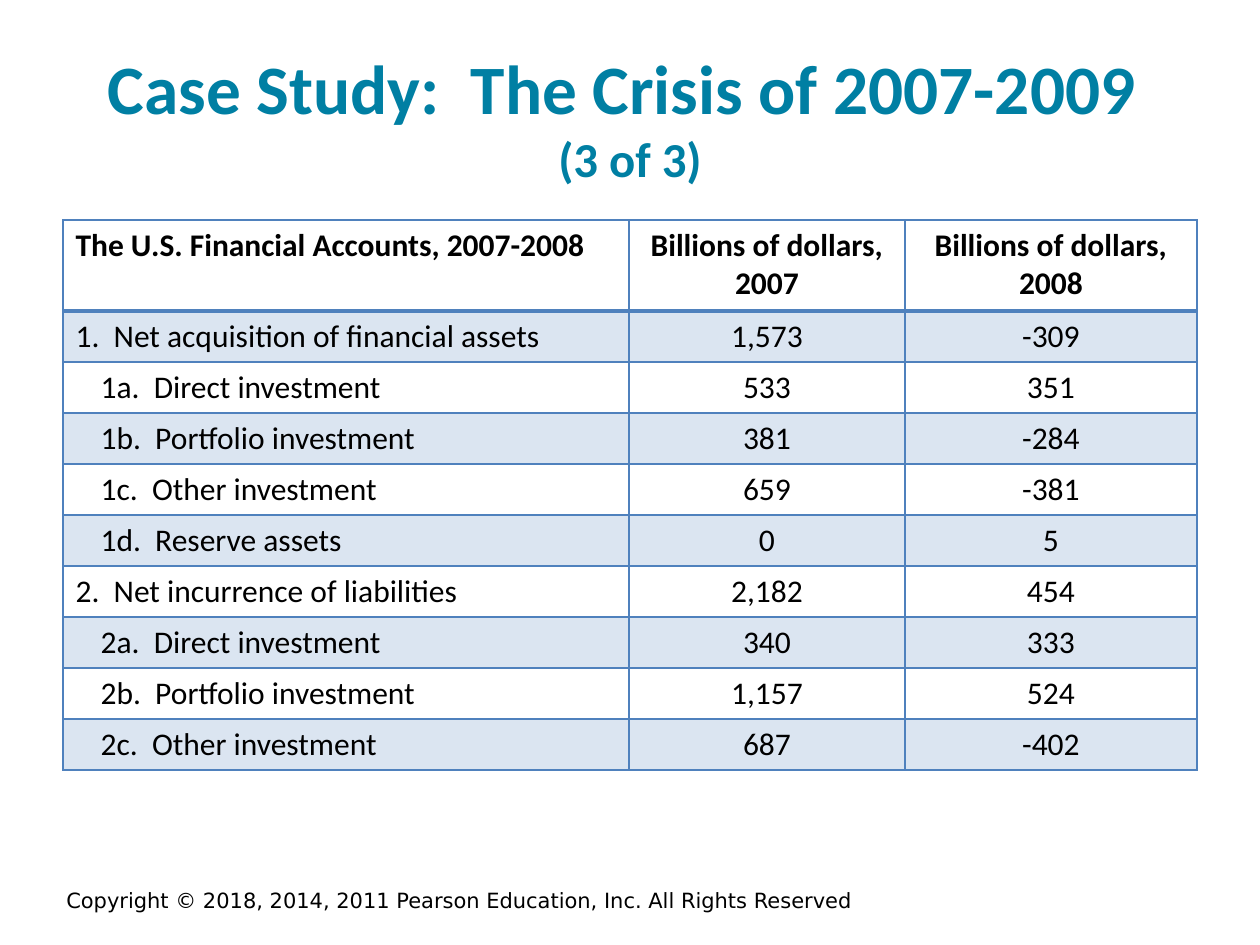
from lxml.etree import SubElement
from pptx import Presentation
from pptx.dml.color import RGBColor as Rgb
from pptx.enum.text import MSO_ANCHOR as Anchor, PP_ALIGN as Align
from pptx.oxml import parse_xml
from pptx.oxml.ns import nsdecls, qn
from pptx.util import Emu, Pt

SCALE = 914400 // 126
COLORS = {"title": "007FA3", "text": "000000", "accent": "4F81BD"}
COLUMN_WIDTHS = [566, 276, 292]
HEADER_HEIGHT, ROW_HEIGHT = 91, 51
INDENT = 25
HEADER = ["The U.S. Financial Accounts, 2007-2008",
          "Billions of dollars, 2007", "Billions of dollars, 2008"]
ACCOUNTS = [
    ("1.  Net acquisition of financial assets", "1,573", "-309"),
    ("1a.  Direct investment", "533", "351"),
    ("1b.  Portfolio investment", "381", "-284"),
    ("1c.  Other investment", "659", "-381"),
    ("1d.  Reserve assets", "0", "5"),
    ("2.  Net incurrence of liabilities", "2,182", "454"),
    ("2a.  Direct investment", "340", "333"),
    ("2b.  Portfolio investment", "1,157", "524"),
    ("2c.  Other investment", "687", "-402"),
]


def px(length):
    return Emu(length * SCALE)


def write(para, text, size=18, color="text", font="Calibri", bold=False, align=Align.LEFT):
    para.alignment = align
    span = para.add_run()
    span.text = text
    span.font.size = Pt(size)
    span.font.name = font
    span.font.bold = bold
    span.font.color.rgb = Rgb.from_string(COLORS[color])


def add_box(page, left, top, width, height):
    box = page.shapes.add_textbox(px(left), px(top), px(width), px(height))
    box.text_frame.word_wrap = True
    box.text_frame.vertical_anchor = Anchor.MIDDLE
    return box.text_frame.paragraphs[0]


def add_title(page):
    para = add_box(page, 63, 38, 1134, 157)
    title = {"color": "title", "bold": True, "align": Align.CENTER}
    write(para, "Case Study:  The Crisis of 2007-2009 ", size=39.6, **title)
    para.add_line_break()
    write(para, "(3 of 3)", size=27.9, **title)


def shade(cell, banded):
    if not banded:
        cell.fill.background()
        return
    cell.fill.solid()
    cell.fill.fore_color.rgb = Rgb.from_string(COLORS["accent"])
    color = cell._tc.tcPr.find(".//" + qn("a:srgbClr"))
    SubElement(color, qn("a:alpha"), val="20000")


def add_borders(cell, top, bottom):
    widths = {"lnL": 1, "lnR": 1, "lnT": top, "lnB": bottom}
    for index, (side, width) in enumerate(widths.items()):
        line = parse_xml(
            f'<a:{side} {nsdecls("a")} w="{Pt(width)}"><a:solidFill>'
            f'<a:srgbClr val="{COLORS["accent"]}"/></a:solidFill></a:{side}>')
        cell._tc.tcPr.insert(index, line)


def fill_cell(cell, text, row, column):
    para = cell.text_frame.paragraphs[0]
    if column == 0 and row and text[1] != ".":
        para._p.get_or_add_pPr().set("marL", str(px(INDENT)))
    write(para, text, bold=row == 0, align=Align.CENTER if column else Align.LEFT)
    shade(cell, banded=row % 2 == 1)
    add_borders(cell, top=2 if row == 1 else 1, bottom=2 if row == 0 else 1)


def add_accounts_table(page):
    rows = [HEADER, *ACCOUNTS]
    height = HEADER_HEIGHT + ROW_HEIGHT * len(ACCOUNTS)
    table = page.shapes.add_table(
        len(rows), len(HEADER), px(63), px(220), px(sum(COLUMN_WIDTHS)), px(height)).table
    table.first_row = table.horz_banding = False
    for column, width in zip(table.columns, COLUMN_WIDTHS):
        column.width = px(width)
    for row, texts in enumerate(rows):
        table.rows[row].height = px(ROW_HEIGHT if row else HEADER_HEIGHT)
        for column, text in enumerate(texts):
            fill_cell(table.cell(row, column), text, row, column)


def add_copyright(page):
    para = add_box(page, -18, 878, 955, 45)
    write(para, "Copyright © 2018, 2014, 2011 Pearson Education, Inc. All Rights Reserved",
          size=12, font="DejaVu Sans", align=Align.CENTER)


def main():
    deck = Presentation()
    deck.slide_width, deck.slide_height = px(1260), px(945)
    page = deck.slides.add_slide(deck.slide_layouts[6])
    add_copyright(page)
    add_title(page)
    add_accounts_table(page)
    deck.save("out.pptx")


if __name__ == "__main__":
    main()
